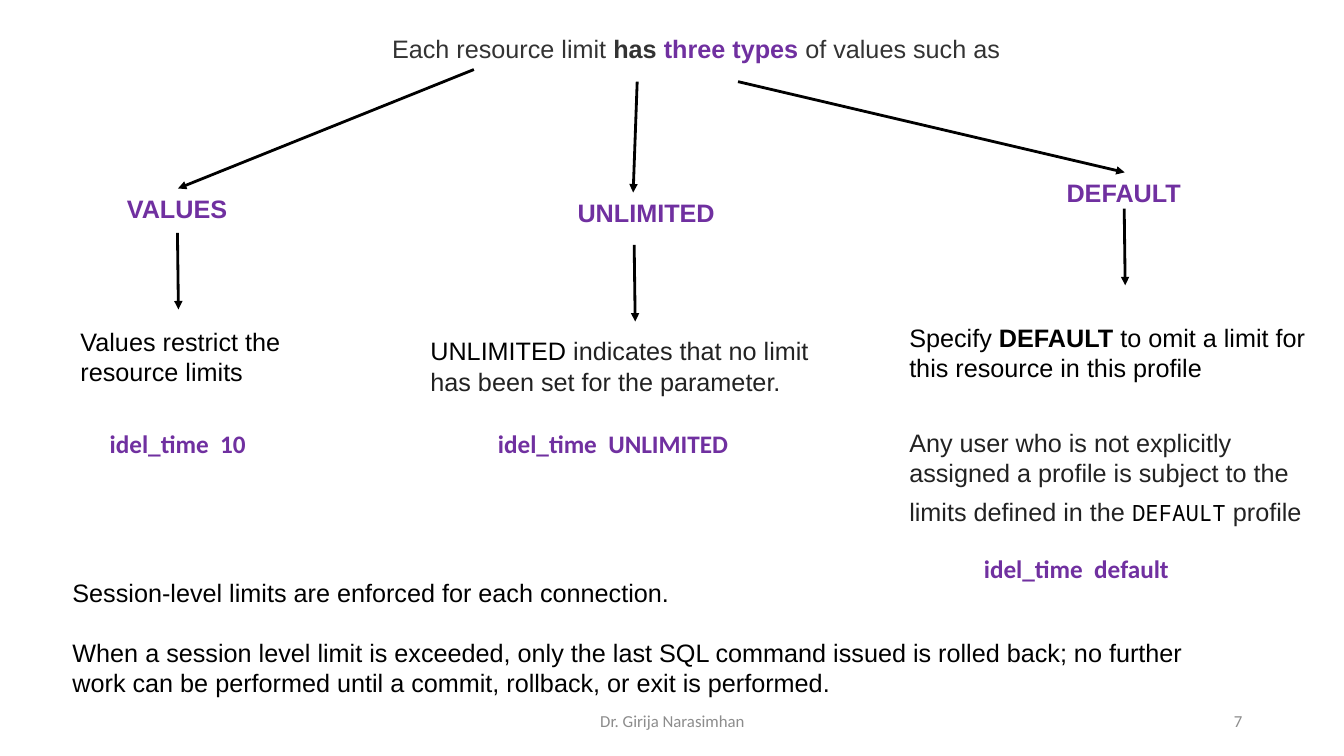
from dataclasses import dataclass

from lxml import etree
from pptx import Presentation
from pptx import util as u
from pptx.dml.color import RGBColor
from pptx.enum import shapes, text
from pptx.oxml import ns


@dataclass(frozen=True)
class Theme:
    sans: str = "Arial"
    label: str = "Calibri"
    mono: str = "Noto Sans Mono"
    black: str = "000000"
    title: str = "333333"
    body: str = "222222"
    accent: str = "7030A0"
    muted: str = "8C8C8C"
    size: int = 18
    code_size: int = 16
    tail_size: int = 24
    footer_size: int = 12
    line_width: int = 2


THEME = Theme()
LINE_HEIGHT = 0.4
STEM_LENGTH = 0.76
PARAGRAPH_GAP = 21


def style(font, name=THEME.sans, size=THEME.size, color=THEME.black, bold=False):
    font.name, font.size, font.bold = name, u.Pt(size), bold
    font.color.rgb = RGBColor.from_string(color)


def add_text(page, area, paragraphs, wrap=True, align=text.PP_ALIGN.LEFT,
             anchor=text.MSO_ANCHOR.TOP, gap=0, **look):
    """Each paragraph is a string, or a list of (words, differences from look)."""
    box = page.shapes.add_textbox(*map(u.Inches, area))
    frame = box.text_frame
    frame.word_wrap = wrap
    frame.vertical_anchor = anchor
    for index, content in enumerate(paragraphs):
        para = frame.add_paragraph() if index else frame.paragraphs[0]
        para.alignment = align
        if index:
            para.space_before = u.Pt(gap)
        style(para.font, **look)
        if isinstance(content, str):
            para.add_run().text = content
            continue
        for words, changes in content:
            span = para.add_run()
            span.text = words
            style(span.font, **{**look, **changes})
    return box


def add_arrow(page, start, end, target=None):
    arrow = page.shapes.add_connector(
        shapes.MSO_CONNECTOR.STRAIGHT, *map(u.Inches, (*start, *end)))
    if target is not None:
        arrow.end_connect(target, 0)
    arrow.line.width = u.Pt(THEME.line_width)
    arrow.line.color.rgb = RGBColor.from_string(THEME.black)
    properties = arrow.line._get_or_add_ln()
    etree.SubElement(properties, ns.qn("a:tailEnd"), type="triangle")
    etree.SubElement(arrow._element.spPr, ns.qn("a:effectLst"))


def add_title(page, area):
    add_text(page, area, [[
        ("Each resource limit ", {}),
        ("has ", {"bold": True}),
        ("three types ", {"bold": True, "color": THEME.accent}),
        ("of values such as", {}),
    ]], color=THEME.title)


def add_branch(page, area, heading, branch_start, branch_end, stem_start,
               details, example, example_area, joined=True):
    """Heading with its incoming arrow, stem, explanations and example."""
    box = add_text(page, area, [heading], wrap=False, color=THEME.accent, bold=True)
    add_arrow(page, branch_start, branch_end, box if joined else None)
    left, top = stem_start
    add_arrow(page, stem_start, (left + 0.01, top + STEM_LENGTH))
    for detail_area, spans, color in details:
        add_text(page, detail_area, [spans], color=color)
    add_text(page, example_area, [example], wrap=False, name=THEME.label,
             color=THEME.accent, bold=True)


def add_summary(page, area):
    add_text(page, area, [
        "Session-level limits are enforced for each connection.",
        "When a session level limit is exceeded, only the last SQL command issued "
        "is rolled back; no further work can be performed until a commit, "
        "rollback, or exit is performed.",
    ], gap=PARAGRAPH_GAP)


def add_footer(page, top):
    for left, width, words, align in (
            (4.42, 4.5, "Dr. Girija Narasimhan", text.PP_ALIGN.CENTER),
            (9.42, 3, "7", text.PP_ALIGN.RIGHT)):
        add_text(page, (left, top, width, LINE_HEIGHT), [words], align=align,
                 anchor=text.MSO_ANCHOR.MIDDLE, name=THEME.label,
                 size=THEME.footer_size, color=THEME.muted)


def main():
    deck = Presentation()
    deck.slide_width, deck.slide_height = u.Inches(13.33), u.Inches(7.5)
    page = deck.slides.add_slide(deck.slide_layouts[6])

    add_title(page, (3.79, 0.28, 6.67, LINE_HEIGHT))

    # Left branch
    add_branch(
        page, (1.16, 1.87, 1.21, LINE_HEIGHT), "VALUES",
        (4.7, 0.69), (1.76, 1.87), (1.76, 2.31),
        [((0.7, 3.19, 3.1, 0.71),
          [("Values restrict the resource limits", {})], THEME.black)],
        "idel_time  10", (0.99, 4.2, 1.56, LINE_HEIGHT))

    # Middle branch
    add_branch(
        page, (5.63, 1.91, 1.65, LINE_HEIGHT), "UNLIMITED",
        (6.32, 0.81), (6.28, 1.91), (6.29, 2.43),
        [((4.17, 3.28, 4.25, 0.71),
          [("UNLIMITED", {"color": THEME.black}),
           (" indicates that no limit has been set for the parameter.", {})],
          THEME.body)],
        "idel_time  UNLIMITED", (4.84, 4.2, 2.51, LINE_HEIGHT), joined=False)

    # Right branch; the larger closing space sets the height of the last line
    add_branch(
        page, (10.48, 1.71, 1.35, LINE_HEIGHT), "DEFAULT",
        (7.32, 0.81), (11.15, 1.71), (11.15, 2.07),
        [((8.92, 3.15, 4.17, 0.71),
          [("Specify ", {}), ("DEFAULT ", {"bold": True}),
           ("to omit a limit for this resource in this profile", {})],
          THEME.black),
         ((8.92, 4.19, 4.16, 1.11),
          [("Any user who is not explicitly assigned a profile is subject to "
            "the limits defined in the ", {}),
           ("DEFAULT", {"name": THEME.mono, "size": THEME.code_size,
                        "color": THEME.black}),
           (" profile", {}),
           (" ", {"name": THEME.label, "size": THEME.tail_size})],
          THEME.body)],
        "idel_time  default", (9.66, 5.44, 2.05, LINE_HEIGHT))

    add_summary(page, (0.62, 5.68, 11.32, 1.31))
    add_footer(page, 6.95)
    deck.save("out.pptx")


if __name__ == "__main__":
    main()
